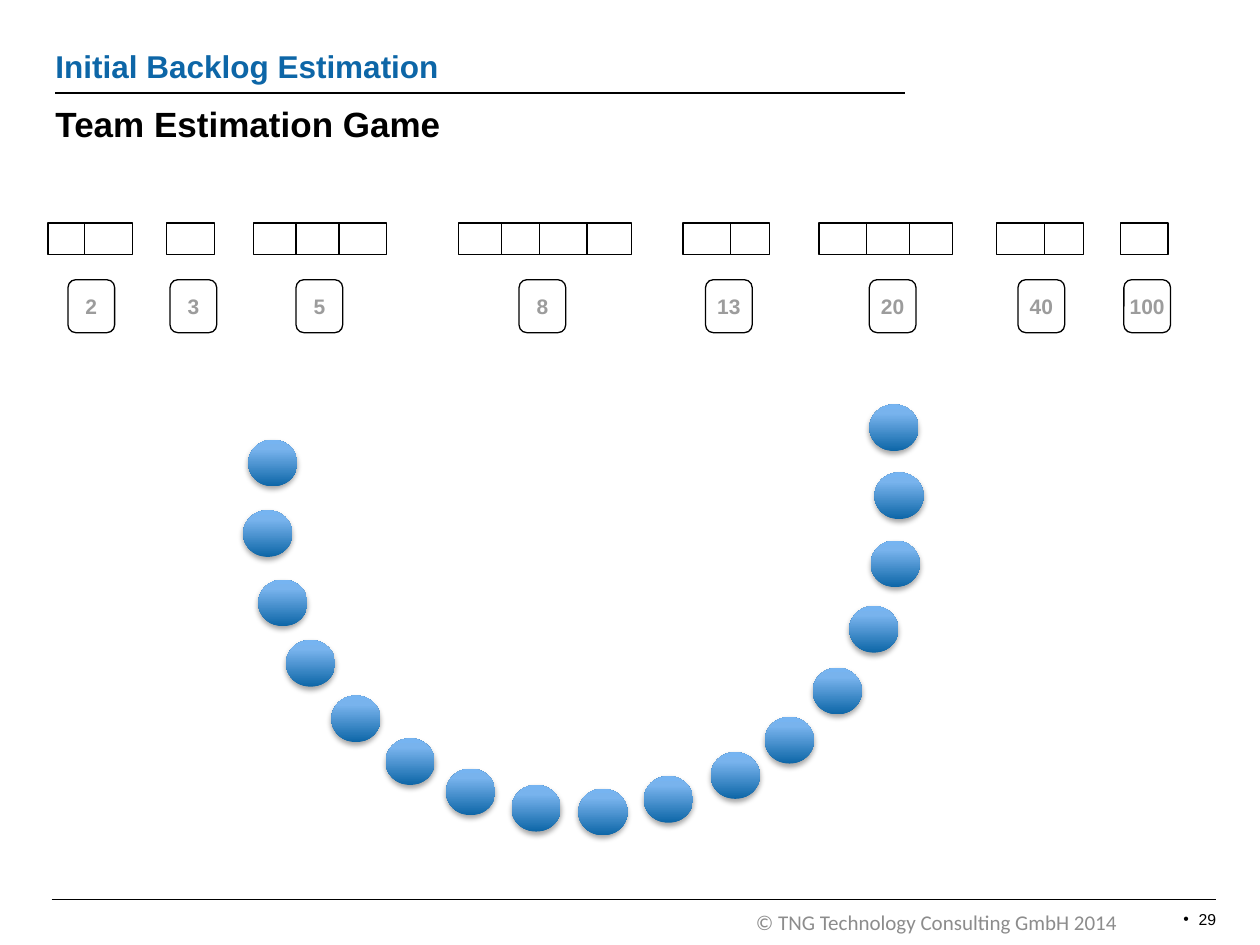
from lxml import etree
from pptx import Presentation
from pptx.dml.color import RGBColor
from pptx.enum import shapes, text
from pptx.oxml import ns, parse_xml
from pptx.util import Inches, Pt

BLACK = RGBColor(0x00, 0x00, 0x00)
WHITE = RGBColor(0xFF, 0xFF, 0xFF)
BLUE = RGBColor(0x0D, 0x66, 0xA7)
CARD_GRAY = RGBColor(0x9C, 0x9C, 0x9C)
FOOTER_GRAY = RGBColor(0x8C, 0x8C, 0x8C)
DOT_STOPS = [(0, BLUE), (80, RGBColor(0x78, 0xB3, 0xED)), (100, RGBColor(0x76, 0xB4, 0xF1))]

HEADINGS = [
    ("Initial Backlog Estimation", (0.44, 0.37, 6.75, 0.3), text.MSO_ANCHOR.BOTTOM,
     {"size": Pt(18), "name": "Arial", "bold": True}, BLUE),
    ("Team Estimation Game", (0.44, 0.81, 6.75, 0.34), text.MSO_ANCHOR.TOP,
     {"size": Pt(20), "name": "Arial", "bold": True}, BLACK),
    ("© TNG Technology Consulting GmbH 2014", (6, 7.22, 3.26, 0.2), text.MSO_ANCHOR.TOP,
     {"size": Pt(12), "name": "Calibri"}, FOOTER_GRAY),
]
PAGE_NUMBER = "29"
RULES = [(0.44, 7.18, 0.74), (0.41, 9.65, 7.14)]

ESTIMATES = [
    ("2", 0.54, [0.38, 0.67]),
    ("3", 1.35, [1.32]),
    ("5", 2.35, [2.01, 2.35, 2.69]),
    ("8", 4.12, [3.64, 4.63, 3.98, 4.28]),
    ("13", 5.6, [5.73, 5.42]),
    ("20", 6.9, [7.18, 6.84, 6.5]),
    ("40", 8.08, [8.22, 7.91]),
    ("100", 8.92, [8.89]),
]
STORY_TOP, STORY_SIZE = 1.77, (0.38, 0.25)
CARD_TOP, CARD_SIZE = 2.22, (0.37, 0.42)

TEAM = [
    (1.97, 3.49), (1.93, 4.05), (2.05, 4.6), (2.27, 5.08), (2.63, 5.52), (3.06, 5.86),
    (3.54, 6.1), (4.06, 6.23), (4.59, 6.26), (5.11, 6.16), (5.64, 5.97), (6.07, 5.69),
    (6.45, 5.3), (6.74, 4.81), (6.91, 4.29), (6.94, 3.75), (6.9, 3.21),
]
DOT_SIZE = (0.39, 0.37)


def write(box, words, look, color, anchor, align, margin=0):
    frame = box.text_frame
    settings = {"word_wrap": True, "vertical_anchor": anchor}
    settings.update({f"margin_{side}": Inches(margin) for side in ("left", "right", "top", "bottom")})
    for key, value in settings.items():
        setattr(frame, key, value)
    para = frame.paragraphs[0]
    para.alignment = align
    span = para.add_run()
    span.text = words
    for key, value in look.items():
        setattr(span.font, key, value)
    span.font.color.rgb = color
    return para


def add_figure(page, kind, left, top, size, fill=None, line=None):
    figure = page.shapes.add_shape(kind, *map(Inches, (left, top, *size)))
    figure.shadow.inherit = False
    if fill is None:
        figure.fill.background()
    else:
        figure.fill.solid()
        figure.fill.fore_color.rgb = fill
    if line is None:
        figure.line.fill.background()
    else:
        figure.line.color.rgb = line
        figure.line.width = Pt(0.75)
    return figure


def add_rule(page, start, end, height):
    rule = page.shapes.add_connector(
        shapes.MSO_CONNECTOR.STRAIGHT, *map(Inches, (start, height, end, height)))
    rule.line.color.rgb = BLACK
    rule.line.width = Pt(1)
    etree.SubElement(rule._element.spPr, ns.qn("a:effectLst"))


def add_dot(page, left, top):
    dot = add_figure(page, shapes.MSO_SHAPE.OVAL, left, top, DOT_SIZE)
    dot.fill.gradient()
    dot.fill.gradient_angle = 90
    stops = dot._element.spPr.find(".//" + ns.qn("a:gsLst"))
    for stop in list(stops):
        stops.remove(stop)
    for position, color in DOT_STOPS:
        stops.append(parse_xml(
            f'<a:gs {ns.nsdecls("a")} pos="{position * 1000}"><a:srgbClr val="{color}"/></a:gs>'))
    dot._element.spPr.find(ns.qn("a:effectLst")).append(parse_xml(
        f'<a:outerShdw {ns.nsdecls("a")} blurRad="{Pt(3.1)}" dist="{Pt(1.8)}" dir="5400000" '
        f'rotWithShape="0"><a:srgbClr val="{BLACK}"><a:alpha val="35000"/></a:srgbClr></a:outerShdw>'))


def add_page_number(page):
    box = page.shapes.add_textbox(*map(Inches, (9.28, 7.17, 0.47, 0.25)))
    para = write(box, PAGE_NUMBER, {"size": Pt(9), "name": "Arial"}, BLACK,
                 text.MSO_ANCHOR.TOP, text.PP_ALIGN.RIGHT, 0.05)
    box.text_frame.margin_left = box.text_frame.margin_right = Inches(0.1)
    properties = para._p.get_or_add_pPr()
    properties.set("marL", str(Inches(0.12)))
    properties.set("indent", str(-Inches(0.12)))
    etree.SubElement(properties, ns.qn("a:buFont"), typeface="Arial")
    etree.SubElement(properties, ns.qn("a:buChar"), char="•")


def main():
    deck = Presentation()
    deck.slide_width, deck.slide_height = Inches(10), Inches(7.5)
    page = deck.slides.add_slide(deck.slide_layouts[6])

    for rule in RULES:
        add_rule(page, *rule)
    for words, place, anchor, look, color in HEADINGS:
        box = page.shapes.add_textbox(*map(Inches, place))
        write(box, words, look, color, anchor, text.PP_ALIGN.LEFT)
    add_page_number(page)

    for points, card_left, stories in ESTIMATES:
        for left in stories:
            add_figure(page, shapes.MSO_SHAPE.RECTANGLE, left, STORY_TOP, STORY_SIZE, WHITE, BLACK)
        card = add_figure(page, shapes.MSO_SHAPE.ROUNDED_RECTANGLE, card_left, CARD_TOP,
                          CARD_SIZE, line=BLACK)
        write(card, points, {"size": Pt(12), "name": "Arial", "bold": True}, CARD_GRAY,
              text.MSO_ANCHOR.MIDDLE, text.PP_ALIGN.CENTER)
    for left, top in TEAM:
        add_dot(page, left, top)

    deck.save("out.pptx")


if __name__ == "__main__":
    main()
